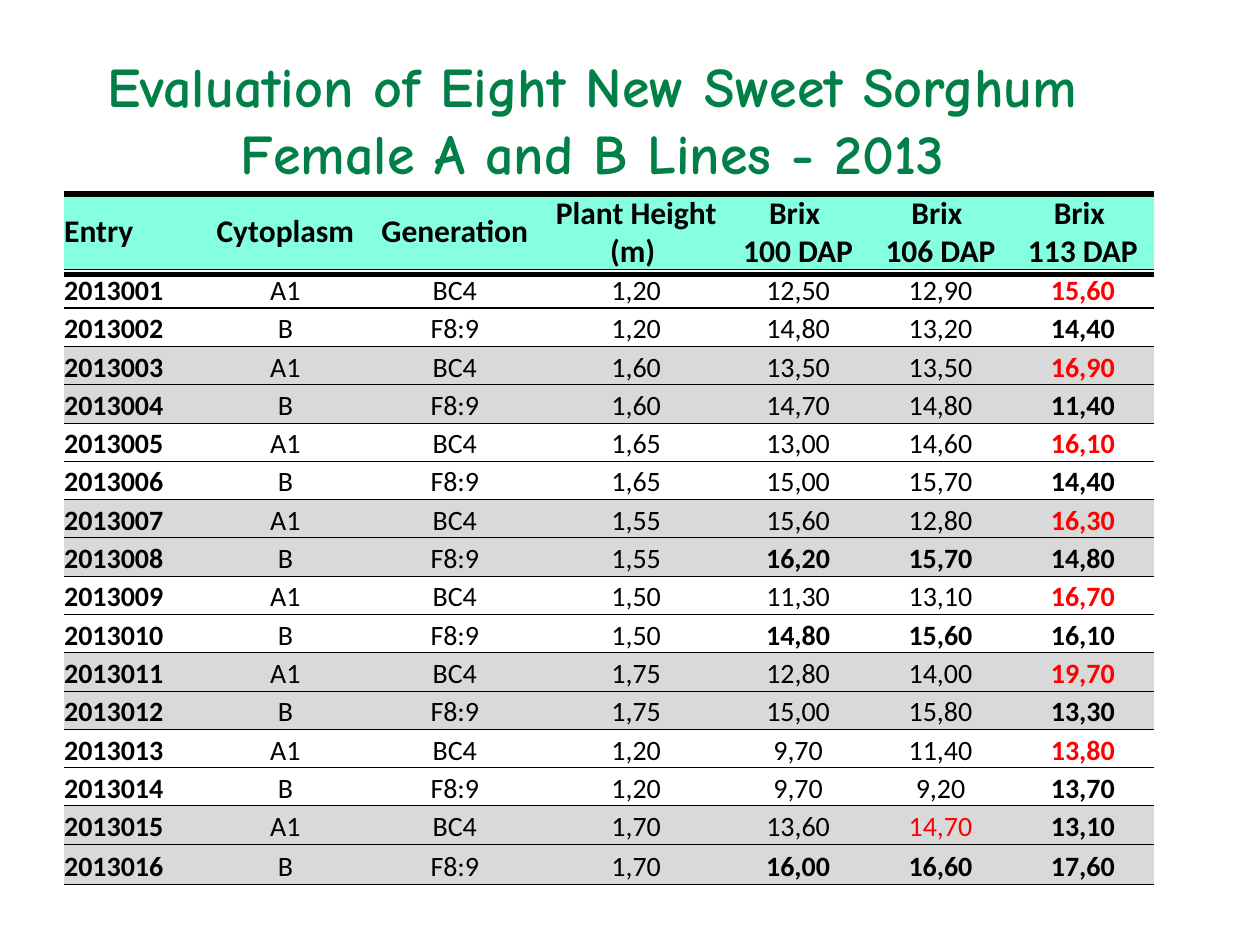
from lxml import etree
from pptx import Presentation
from pptx.dml.color import RGBColor
from pptx.enum.shapes import MSO_CONNECTOR
from pptx.enum.text import MSO_ANCHOR, PP_ALIGN
from pptx.oxml.ns import qn
from pptx.util import Inches, Pt

LEFT, CENTER = PP_ALIGN.LEFT, PP_ALIGN.CENTER
MIDDLE, BOTTOM = MSO_ANCHOR.MIDDLE, MSO_ANCHOR.BOTTOM
STRAIGHT = MSO_CONNECTOR.STRAIGHT

TITLE = "Evaluation of Eight New Sweet Sorghum Female A and B Lines - 2013"
HEADERS = ["Entry", "Cytoplasm", "Generation", "Plant Height (m) ",
           "Brix \n100 DAP", "Brix \n106 DAP", "Brix \n113 DAP"]
# One A1 line and its B line per pair: height, then Brix at 100, 106 and 113 DAP
PAIRS = [
    ("1,20", ("12,50", "12,90", "15,60"), ("14,80", "13,20", "14,40")),
    ("1,60", ("13,50", "13,50", "16,90"), ("14,70", "14,80", "11,40")),
    ("1,65", ("13,00", "14,60", "16,10"), ("15,00", "15,70", "14,40")),
    ("1,55", ("15,60", "12,80", "16,30"), ("16,20", "15,70", "14,80")),
    ("1,50", ("11,30", "13,10", "16,70"), ("14,80", "15,60", "16,10")),
    ("1,75", ("12,80", "14,00", "19,70"), ("15,00", "15,80", "13,30")),
    ("1,20", ("9,70", "11,40", "13,80"), ("9,70", "9,20", "13,70")),
    ("1,70", ("13,60", "14,70", "13,10"), ("16,00", "16,60", "17,60")),
]
LINES = [("A1", "BC4"), ("B", "F8:9")]
BOLD_BRIX_ROWS = {8, 10, 16}
RED_CELLS = {(row, 6) for row in range(1, 15, 2)} | {(15, 5)}

COLORS = {"title": "008047", "header": "85FFE0", "band": "D9D9D9",
          "text": "000000", "highlight": "FF0000"}
FONTS = {"title": "Comic Neue", "table": "Calibri"}
NO_STYLE = "{2D5ABB26-0587-4C30-8999-92F81FD0307C}"

TABLE_LEFT, TABLE_TOP, TABLE_HEIGHT = 0.51, 1.54, 5.48
COLUMN_WIDTHS = [1.13, 1.25, 1.44, 1.44, 1.13, 1.13, 1.13]
HEADER_HEIGHT, LAST_HEIGHT = 0.6, 0.32
LAST_ROW = 2 * len(PAIRS)
ROW_HEIGHT = (TABLE_HEIGHT - HEADER_HEIGHT - LAST_HEIGHT) / (LAST_ROW - 1)
RULES = [TABLE_TOP, 2.18]


def write_text(frame, text, *, size, font, color="text", bold=False, align=CENTER):
    frame.word_wrap = True
    for index, line in enumerate(text.split("\n")):
        paragraph = frame.add_paragraph() if index else frame.paragraphs[0]
        paragraph.alignment = align
        run = paragraph.add_run()
        run.text = line
        run.font.size = Pt(size)
        run.font.name = FONTS[font]
        run.font.bold = bold
        run.font.color.rgb = RGBColor.from_string(COLORS[color])


def add_border(cell, side, points):
    """Draw one side of a cell; side is 'T' or 'B'."""
    line = etree.Element(qn(f"a:ln{side}"), w=str(Pt(points)))
    fill = etree.SubElement(line, qn("a:solidFill"))
    etree.SubElement(fill, qn("a:srgbClr"), val=COLORS["text"])
    cell._tc.get_or_add_tcPr().insert(0, line)


def format_cell(cell, fill, anchor):
    cell.margin_left = cell.margin_right = cell.margin_top = cell.margin_bottom = 0
    cell.vertical_anchor = anchor
    if fill:
        cell.fill.solid()
        cell.fill.fore_color.rgb = RGBColor.from_string(COLORS[fill])
    else:
        cell.fill.background()


def body_rows():
    for pair, (height, *brix_pair) in enumerate(PAIRS):
        for member, brix in enumerate(brix_pair):
            entry = 2 * pair + member + 1
            yield [str(2013000 + entry), *LINES[member], height, *brix]


def add_title(slide):
    box = slide.shapes.add_textbox(0, Inches(0.36), Inches(9.41), Inches(1.18))
    write_text(box.text_frame, TITLE, size=32, font="title", color="title", bold=True)


def add_results_table(slide):
    frame = slide.shapes.add_table(
        LAST_ROW + 1, len(HEADERS), Inches(TABLE_LEFT), Inches(TABLE_TOP),
        Inches(sum(COLUMN_WIDTHS)), Inches(TABLE_HEIGHT))
    table = frame.table
    table.horz_banding = False
    table._tbl.tblPr.find(qn("a:tableStyleId")).text = NO_STYLE
    for column, width in zip(table.columns, COLUMN_WIDTHS):
        column.width = Inches(width)
    heights = [HEADER_HEIGHT] + [ROW_HEIGHT] * (LAST_ROW - 1) + [LAST_HEIGHT]
    for row, height in zip(table.rows, heights):
        row.height = Inches(height)

    for row, values in enumerate([HEADERS, *body_rows()]):
        is_header = row == 0
        banded = (row - 1) // 2 % 2 == 1
        fill = "header" if is_header else "band" if banded else None
        for column, value in enumerate(values):
            cell = table.cell(row, column)
            format_cell(cell, fill, MIDDLE if is_header else BOTTOM)
            if row % 2 == 0:
                add_border(cell, "B", 1 if row in (0, LAST_ROW) else 0.5)
            else:
                add_border(cell, "T", 1 if row == 1 else 0.5)
            write_text(
                cell.text_frame, value, size=18 if is_header else 16, font="table",
                color="highlight" if (row, column) in RED_CELLS else "text",
                bold=(is_header or column in (0, 6)
                      or (column > 3 and row in BOLD_BRIX_ROWS)),
                align=CENTER if column else LEFT)


def add_header_rules(slide):
    right = TABLE_LEFT + sum(COLUMN_WIDTHS)
    for y in RULES:
        rule = slide.shapes.add_connector(
            STRAIGHT, Inches(TABLE_LEFT), Inches(y), Inches(right), Inches(y))
        rule.line.width = Pt(3)
        rule.line.color.rgb = RGBColor.from_string(COLORS["text"])
        etree.SubElement(rule._element.spPr, qn("a:effectLst"))


def main():
    presentation = Presentation()
    presentation.slide_width = Inches(10)
    presentation.slide_height = Inches(7.5)
    slide = presentation.slides.add_slide(presentation.slide_layouts[6])
    add_title(slide)
    add_results_table(slide)
    add_header_rules(slide)
    presentation.save("out.pptx")


if __name__ == "__main__":
    main()
